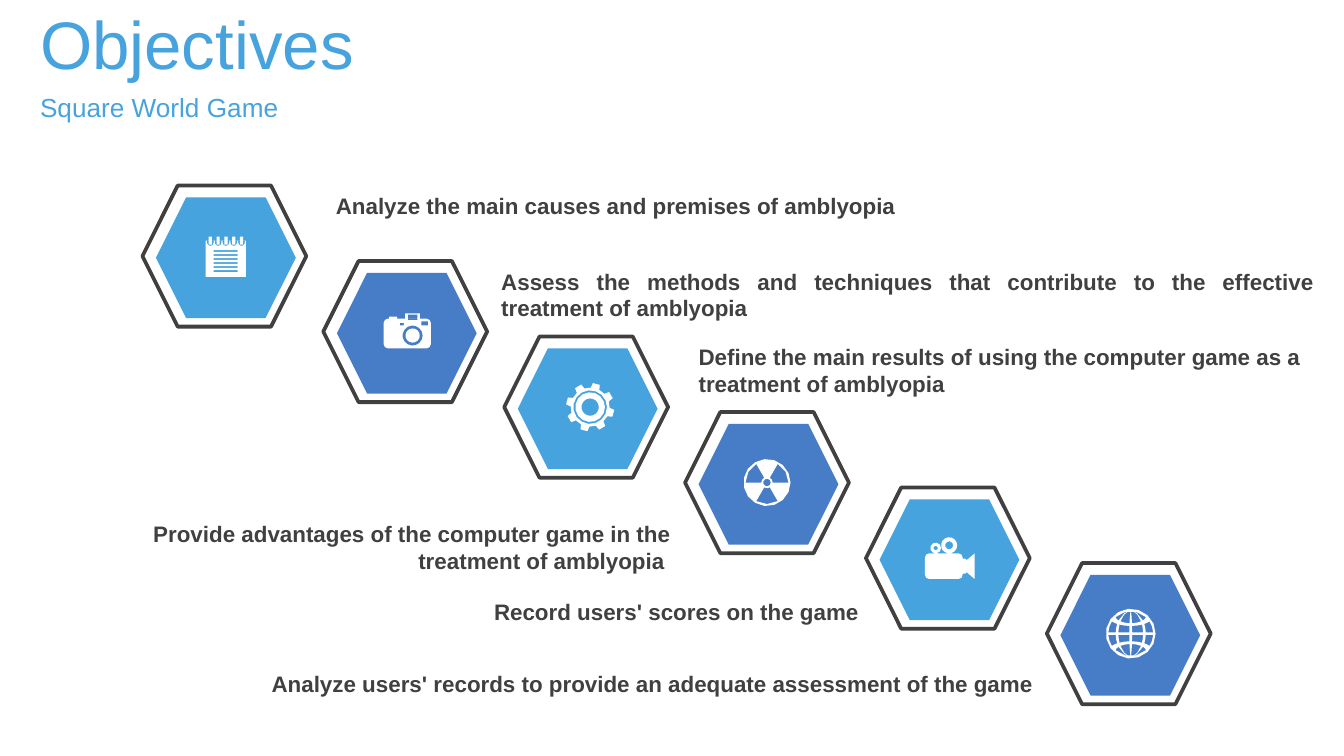
from math import cos, radians, sin, sqrt

from pptx import Presentation
from pptx.dml.color import RGBColor
from pptx.enum.shapes import MSO_SHAPE
from pptx.enum.text import MSO_ANCHOR, PP_ALIGN
from pptx.util import Pt

HEXAGON = MSO_SHAPE.HEXAGON
TOP, MIDDLE = MSO_ANCHOR.TOP, MSO_ANCHOR.MIDDLE
LEFT, RIGHT, JUSTIFY = PP_ALIGN.LEFT, PP_ALIGN.RIGHT, PP_ALIGN.JUSTIFY

SKY = RGBColor(0x47, 0xA3, 0xDE)
BLUE = RGBColor(0x47, 0x7D, 0xC7)
DARK = RGBColor(0x40, 0x40, 0x40)
WHITE = RGBColor(0xFF, 0xFF, 0xFF)

UNIT = Pt(0.72)  # icon grid


def arc(cx, cy, r, start=0, end=360):
    """Points along a circular arc, clockwise, angles in degrees."""
    n = max(1, round(abs(end - start) / (24 if r > 5 else 40)))
    angles = [radians(start + (end - start) * i / n) for i in range(n + 1)]
    return [(cx + r * cos(a), cy + r * sin(a)) for a in angles]


def box(x0, y0, x1, y1, r=0):
    """Points of a rectangle with corner radius r."""
    if not r:
        return [(x0, y0), (x1, y0), (x1, y1), (x0, y1)]
    return (arc(x0 + r, y0 + r, r, 180, 270) + arc(x1 - r, y0 + r, r, 270, 360)
            + arc(x1 - r, y1 - r, r, 0, 90) + arc(x0 + r, y1 - r, r, 90, 180))


prs = Presentation()
prs.slide_width, prs.slide_height = Pt(720), Pt(405)
s = prs.slides.add_slide(prs.slide_layouts[6])

# Icons: outlines around the hexagon centre; an outline inside another is a hole
notepad = [box(-14, -11.5, 16, 15.5)]
notepad += [box(-8, -4.5 + 3 * i, 10, -3.1 + 3 * i) for i in range(6)]
for i in range(5):
    x = -10.4 + 5.8 * i
    notepad.append([(x - 2.5, -11.5), (x + 2.5, -11.5)] + arc(x, -10, 2.5, 0, 180))
    notepad.append(box(x - 1.2, -14.5, x + 1.2, -8.5))

camera = [
    box(-16, -9.5, 19, 12.5, 3), box(-12, -11, -6, -9.5),
    box(0, -13.5, 11, -9.5), box(2, -12.5, 9, -8.5),
    box(-4, -6.5, -1, -4.5), box(12, -7.5, 17, -4.5),
    arc(5.5, 3, 7.5), arc(5.5, 3, 5.3),
]

teeth = []
for i in range(8):
    for r, turn in [(14.5, -13), (18, -8.5), (18, 8.5), (14.5, 13)]:
        a = radians(15 + 45 * i + turn)
        teeth.append((3 + r * cos(a), r * sin(a)))
gear = [teeth, arc(3, 0, 12.5), arc(3, 0, 11), arc(3, 0, 6.5)]

radiation = [arc(0, 0, 17.5), arc(0, 0, 2.8)]
for a in (60, 180, 300):
    radiation.append(arc(0, 0, 16, a, a + 60) + arc(0, 0, 4.2, a + 60, a))

video = [
    box(-17, -3.5, 11, 15.5, 3),
    [(11, 0.5), (13, 0.5), (14, 1.5), (20, -3.5), (20, 15.5), (14, 10.5),
     (13, 11.5), (11, 11.5)],
    arc(-9, -7.5, 4), arc(-9, -7.5, 1.6), arc(1, -9.5, 6), arc(1, -9.5, 3),
]

globe = [arc(1.5, 0, 18.5)]
for m0, m1 in [(0.06, 0.55), (0.67, 1)]:
    for p0, p1 in [(1, 5.7), (7.7, 16.2)]:
        corners = [(m0, p0), (m1, p0), (m1, p1), (m0, p1), (m0, p0)]
        cell = []
        for (ma, pa), (mb, pb) in zip(corners, corners[1:]):
            for i in range(2):
                m, p = ma + (mb - ma) * i / 2, pa + (pb - pa) * i / 2
                y = min(p * (1 + 0.6 * m * m), 16.2) if p > 1 else p
                cell.append((m * sqrt(16.7 ** 2 - y * y), y))
        for fx in (-1, 1):
            for fy in (-1, 1):
                globe.append([(1.5 + fx * x, fy * y) for x, y in cell])

for i, icon in enumerate([notepad, camera, gear, radiation, video, globe]):
    x, y = 76.3 + 96.9 * i, 99.4 + 40.45 * i
    frame = s.shapes.add_shape(HEXAGON, Pt(x), Pt(y), Pt(87.8), Pt(75.6))
    frame.line.color.rgb = DARK
    frame.line.width = Pt(2)
    core = s.shapes.add_shape(HEXAGON, Pt(x + 7.3), Pt(y + 6.3), Pt(74.9), Pt(64.8))
    core.line.fill.background()

    ox, oy = Pt(x + 43.9), Pt(y + 37.8)
    outlines = [[(ox + px * UNIT, oy + py * UNIT) for px, py in o] for o in icon]
    fb = s.shapes.build_freeform(*outlines[0][0])
    fb.add_line_segments(outlines[0][1:])
    for o in outlines[1:]:
        fb.move_to(*o[0])
        fb.add_line_segments(o[1:])
    symbol = fb.convert_to_shape()
    symbol.line.fill.background()

    for sp, color in [(frame, WHITE), (core, (SKY, BLUE)[i % 2]), (symbol, WHITE)]:
        sp.fill.solid()
        sp.fill.fore_color.rgb = color
        sp.shadow.inherit = False

heading = {"size": Pt(36), "bold": False}
subheading = {"size": Pt(14), "bold": False}
label = {"size": Pt(12), "bold": True}
texts = [
    (14.4, 0, 561.6, 45.4, "Objectives", heading, SKY, LEFT, MIDDLE),
    (14.4, 46, 561.6, 22.3, "Square World Game", subheading, SKY, LEFT, MIDDLE),
    (172.8, 99.4, 334.8, 21.8, "Analyze the main causes and premises of amblyopia",
     label, DARK, LEFT, TOP),
    (261.4, 139.9, 450, 36.4, "Assess the methods and techniques that contribute to "
     "the effective treatment of amblyopia", label, DARK, JUSTIFY, TOP),
    (367.2, 180.5, 348.5, 36.4, "Define the main results of using the computer game "
     "as a treatment of amblyopia", label, DARK, LEFT, TOP),
    (70.6, 275.2, 295.9, 36.4, "Provide advantages of the computer game in the "
     "treatment of amblyopia ", label, DARK, RIGHT, TOP),
    (158.4, 317, 308.9, 21.8, "Record users' scores on the game",
     label, DARK, RIGHT, TOP),
    (128.9, 355.7, 432, 21.8, "Analyze users' records to provide an adequate "
     "assessment of the game", label, DARK, RIGHT, TOP),
]
for x, y, w, h, text, style, color, align, anchor in texts:
    tf = s.shapes.add_textbox(Pt(x), Pt(y), Pt(w), Pt(h)).text_frame
    tf.word_wrap = True
    tf.vertical_anchor = anchor
    p = tf.paragraphs[0]
    p.alignment = align
    r = p.add_run()
    r.text = text
    r.font.name = "Arial"
    r.font.color.rgb = color
    for name, value in style.items():
        setattr(r.font, name, value)

prs.save("out.pptx")
